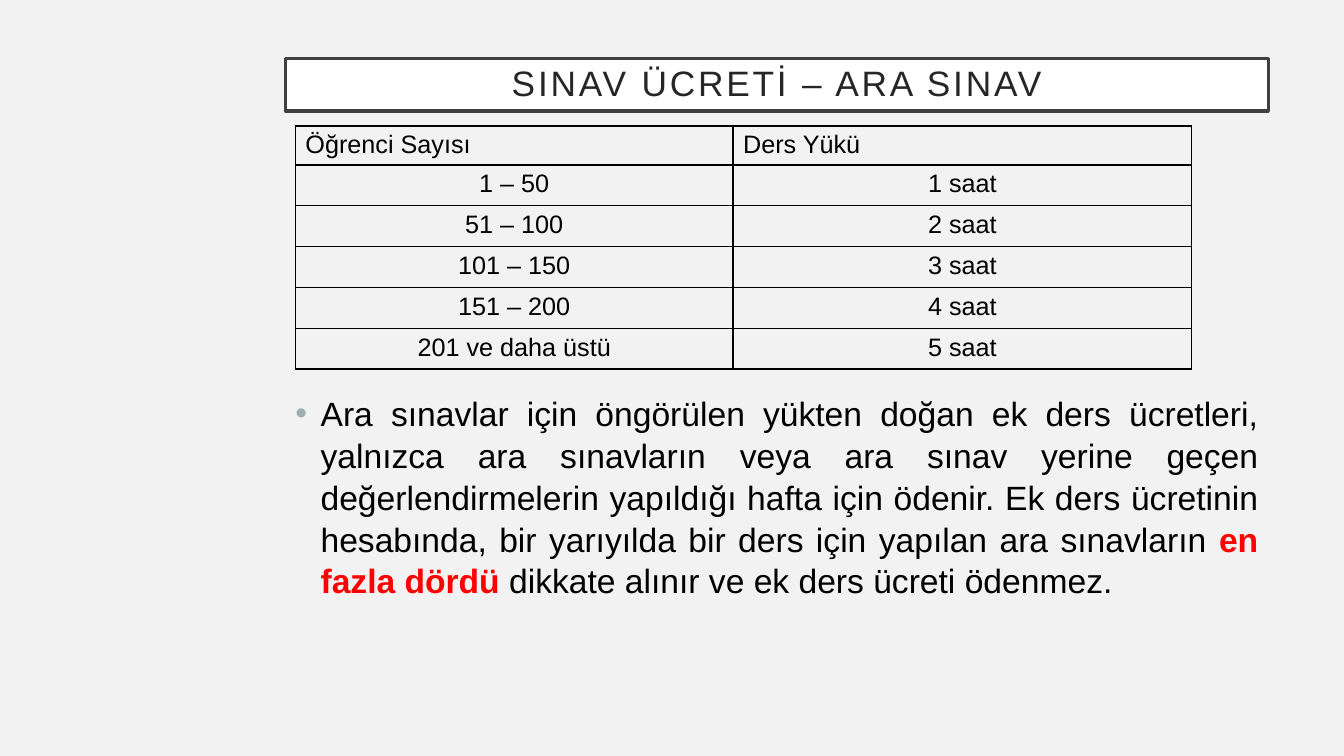
from dataclasses import dataclass

from lxml.etree import SubElement
from pptx import Presentation
from pptx.dml.color import RGBColor
from pptx.enum.text import MSO_ANCHOR as Anchor, MSO_AUTO_SIZE as AutoSize, PP_ALIGN as Align
from pptx.oxml.ns import qn
from pptx.util import Emu, Inches, Pt

FONT = "Arial"
BLACK, RED = "000000", "FF0000"
NO_STYLE = "{2D5ABB26-0587-4C30-8999-92F81FD0307C}"

prs = Presentation()
prs.slide_width, prs.slide_height = Inches(13.33), Inches(7.5)


@dataclass
class Box:
    """Place on a grid of 100 columns by 100 rows."""
    left: float
    top: float
    width: float
    height: float


@dataclass
class Run:
    text: str
    size: float
    color: str = BLACK
    bold: bool = False


@dataclass
class Load:
    students: str
    hours: str
    height: float = 5.4
    align: Align = Align.CENTER


TITLE_BOX = Box(21.23, 7.73, 73.14, 6.93)
BODY_BOX = Box(21.23, 51.07, 73.14, 34.4)
COLUMNS = (32.56, 34.13)
LOADS = [
    Load("Öğrenci Sayısı", "Ders Yükü", 5.16, Align.LEFT),
    Load("1 – 50", "1 saat"),
    Load("51 – 100", "2 saat"),
    Load("101 – 150", "3 saat"),
    Load("151 – 200", "4 saat"),
    Load("201 ve daha üstü", "5 saat"),
]
TABLE_BOX = Box(21.98, 16.67, sum(COLUMNS), sum(load.height for load in LOADS))
BODY_RUNS = [
    Run("Ara sınavlar için öngörülen yükten doğan ek ders ücretleri, yalnızca ara "
        "sınavların veya ara sınav yerine geçen değerlendirmelerin yapıldığı hafta için "
        "ödenir. Ek ders ücretinin hesabında, bir yarıyılda bir ders için yapılan ara "
        "sınavların ", 24),
    Run("en fazla dördü ", 24, RED, True),
    Run("dikkate alınır ve ek ders ücreti ödenmez.", 24),
]


def rgb(color: str) -> RGBColor:
    return RGBColor.from_string(color)


def cols(n: float) -> Emu:
    return Emu(round(prs.slide_width * n / 100))


def rows(n: float) -> Emu:
    return Emu(round(prs.slide_height * n / 100))


def frame(box: Box) -> tuple[Emu, Emu, Emu, Emu]:
    return cols(box.left), rows(box.top), cols(box.width), rows(box.height)


def place(sp, box: Box) -> None:
    sp.left, sp.top, sp.width, sp.height = frame(box)


def add_run(p, run: Run):
    r = p.add_run()
    r.text = run.text
    r.font.name, r.font.size, r.font.bold = FONT, Pt(run.size), run.bold
    r.font.color.rgb = rgb(run.color)
    return r


def add_bullet(p, color: str, indent: float) -> None:
    pPr = p._p.get_or_add_pPr()
    pPr.set("marL", str(Inches(indent)))
    pPr.set("indent", str(-Inches(indent)))
    SubElement(SubElement(pPr, qn("a:buClr")), qn("a:srgbClr"), val=color)
    SubElement(pPr, qn("a:buFont"), typeface=FONT)
    SubElement(pPr, qn("a:buChar"), char="•")


def add_borders(cell, color: str, width: float) -> None:
    tcPr = cell._tc.get_or_add_tcPr()
    for side in ("lnL", "lnR", "lnT", "lnB"):
        ln = SubElement(tcPr, qn(f"a:{side}"), w=str(Pt(width)))
        SubElement(SubElement(ln, qn("a:solidFill")), qn("a:srgbClr"), val=color)


def fill_cell(cell, text: str, align: Align) -> None:
    add_borders(cell, BLACK, 1)
    cell.fill.background()
    p = cell.text_frame.paragraphs[0]
    p.alignment = align
    add_run(p, Run(text, 18))


# Slide and background
slide = prs.slides.add_slide(prs.slide_layouts[1])
slide.background.fill.solid()
slide.background.fill.fore_color.rgb = rgb("F2F2F2")

# Framed title
title = slide.shapes.title
place(title, TITLE_BOX)
title.fill.solid()
title.fill.fore_color.rgb = rgb("FFFFFF")
title.line.color.rgb = rgb("404040")
title.line.width = Pt(2.5)
tf = title.text_frame
tf.auto_size, tf.word_wrap, tf.vertical_anchor = AutoSize.NONE, True, Anchor.MIDDLE
tf.margin_left = tf.margin_right = tf.margin_top = tf.margin_bottom = Inches(0.2)
p = tf.paragraphs[0]
p.alignment, p.line_spacing = Align.CENTER, 0.9
r = add_run(p, Run("SINAV ÜCRETİ – ARA SINAV", 25.2, "262626"))
r.font._element.set("spc", "200")

# Rule below the table
body = slide.placeholders[1]
place(body, BODY_BOX)
tf = body.text_frame
tf.auto_size, tf.word_wrap, tf.vertical_anchor = AutoSize.NONE, True, Anchor.TOP
p = tf.paragraphs[0]
p.alignment, p.line_spacing, p.space_before = Align.JUSTIFY, 1.04, Pt(10)
add_bullet(p, "9BAFB5", 0.25)
for run in BODY_RUNS:
    add_run(p, run)

# Table of course loads
table = slide.shapes.add_table(len(LOADS), len(COLUMNS), *frame(TABLE_BOX)).table
table.first_row = table.horz_banding = False
table._tbl.tblPr.find(qn("a:tableStyleId")).text = NO_STYLE
for column, width in zip(table.columns, COLUMNS):
    column.width = cols(width)
for i, load in enumerate(LOADS):
    table.rows[i].height = rows(load.height)
    for j, text in enumerate((load.students, load.hours)):
        fill_cell(table.cell(i, j), text, load.align)

prs.save("out.pptx")
